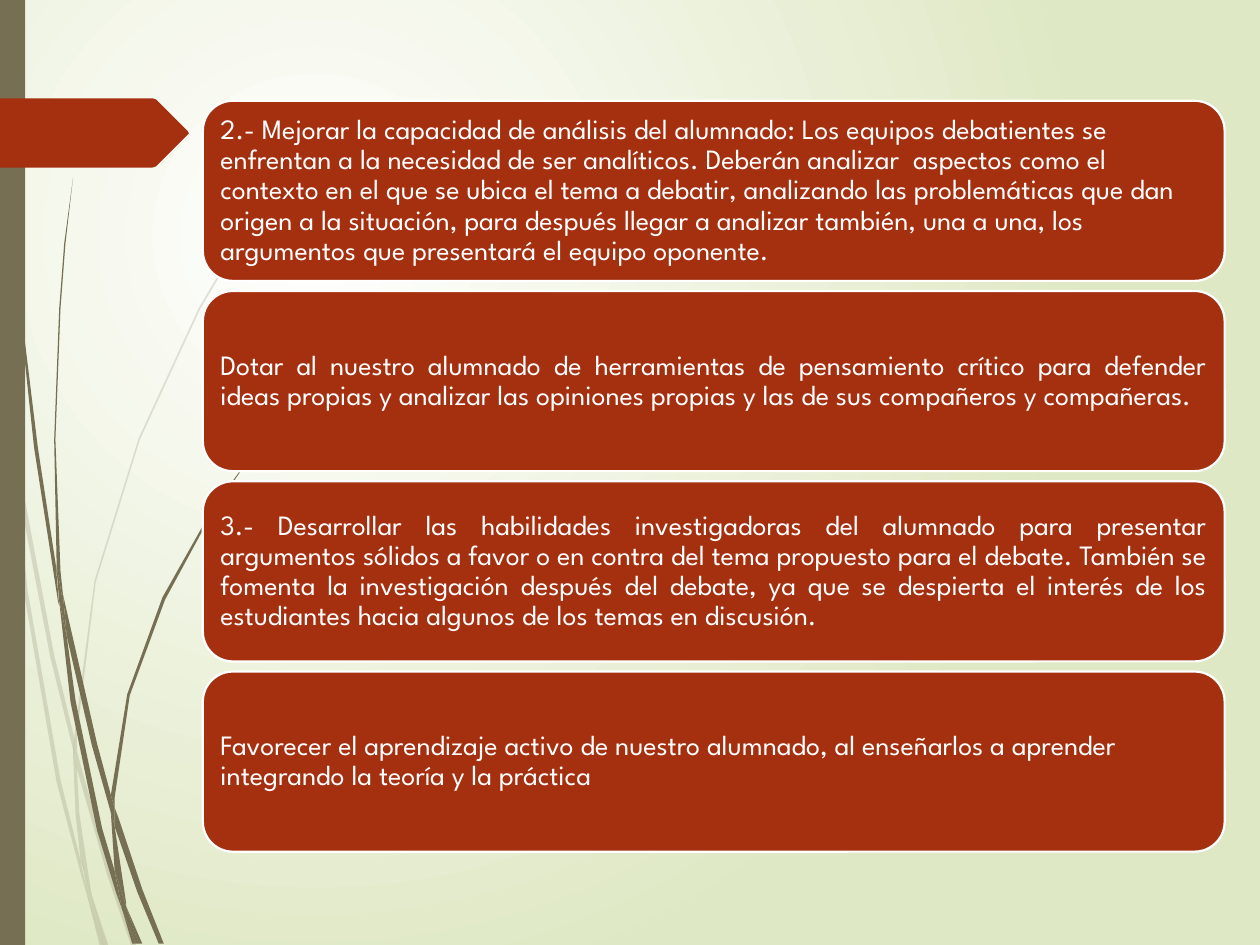
from lxml.etree import SubElement
from pptx import Presentation
from pptx.dml.color import RGBColor
from pptx.enum.shapes import MSO_SHAPE
from pptx.enum.text import MSO_ANCHOR, PP_ALIGN
from pptx.oxml.ns import qn
from pptx.util import Inches, Pt

OLIVE = RGBColor(0x76, 0x6F, 0x54)
RUST = RGBColor(0xA5, 0x30, 0x10)
WHITE = RGBColor(0xFF, 0xFF, 0xFF)
PALE_GREEN = RGBColor(0xDF, 0xE8, 0xC4)

FONT = "League Spartan"
CARD_LEFT, CARD_TOP, CARD_WIDTH, CARD_HEIGHT = 1.61, 0.8, 8.11, 1.43
CARD_PITCH = 1.51

CARDS = (
    ("2.- Mejorar la capacidad de análisis del alumnado: Los equipos debatientes se "
     "enfrentan a la necesidad de ser analíticos. Deberán analizar  aspectos como el "
     "contexto en el que se ubica el tema a debatir, analizando las problemáticas que dan "
     "origen a la situación, para después llegar a analizar también, una a una, los "
     "argumentos que presentará el equipo oponente.", PP_ALIGN.LEFT),
    ("Dotar al nuestro alumnado de herramientas de pensamiento crítico para defender "
     "ideas propias y analizar las opiniones propias y las de sus compañeros y "
     "compañeras. ", PP_ALIGN.JUSTIFY),
    ("3.- Desarrollar las habilidades investigadoras del alumnado para presentar "
     "argumentos sólidos a favor o en contra del tema propuesto para el debate. También se "
     "fomenta la investigación después del debate, ya que se despierta el interés de los "
     "estudiantes hacia algunos de los temas en discusión.", PP_ALIGN.JUSTIFY),
    ("Favorecer el aprendizaje activo de nuestro alumnado, al enseñarlos a aprender "
     "integrando la teoría y la práctica", PP_ALIGN.LEFT),
)

FAINT_BLADES = (
    ((0.08, 3.5), (0.06, 3.22), (0, 2.82), (0, 2.99), (0.07, 3.44)),
    ((0.4, 5.22), (0.59, 5.99), (0.59, 5.86), (0.43, 5.2), (0.1, 3.45), (0.12, 3.76)),
    ((0.64, 6.07), (0.61, 5.96), (0.61, 6.1), (0.85, 6.94), (1.04, 7.5), (1.08, 7.5),
     (0.88, 6.92)),
    ((0.83, 7.5), (0.86, 7.5), (0.73, 7.11)),
    ((0.64, 6.83), (0.48, 6.19), (0.22, 4.69), (0.12, 3.76), (0.08, 3.5), (0.19, 4.7),
     (0.45, 6.21), (0.64, 6.93), (0.7, 7.14), (0.69, 7.07)),
    ((0.58, 5.99), (0.6, 6.46), (0.64, 6.83), (0.67, 6.92), (0.73, 7.11), (0.72, 7.06),
     (0.63, 6.46), (0.61, 6.1), (0.61, 6.08)),
    ((0.61, 5.84), (0.76, 4.62), (1.11, 3.49), (1.59, 2.45), (1.87, 1.98), (2.01, 1.75),
     (2.17, 1.54), (2.17, 1.53), (2.01, 1.75), (1.86, 1.97), (1.58, 2.44), (1.1, 3.48),
     (0.75, 4.61), (0.59, 5.84), (0.59, 5.86), (0.61, 5.96)),
    ((0.7, 7.14), (0.79, 7.5), (0.82, 7.5)),
    ((0.61, 6.08), (0.61, 6.1), (0.61, 5.96), (0.59, 5.86), (0.58, 5.99)),
    ((0.67, 6.92), (0.65, 6.83), (0.69, 7.07), (0.7, 7.14), (0.82, 7.5), (0.83, 7.5),
     (0.73, 7.11)),
)

DARK_BLADES = (
    ((0.05, 1.1), (0.14, 2.33), (0.27, 3.55), (0.46, 4.77), (0.47, 4.81), (0.45, 4.57),
     (0.45, 4.53), (0.3, 3.55), (0.15, 2.32), (0.06, 1.09), (0.04, 0.48), (0.03, 0),
     (0.02, 0), (0.03, 0.48)),
    ((0.73, 5.92), (0.88, 6.45), (0.88, 6.33), (0.88, 6.31), (0.77, 5.9), (0.5, 4.72),
     (0.53, 5.05)),
    ((0.94, 6.49), (0.91, 6.41), (0.91, 6.56), (1.09, 7.08), (1.26, 7.49), (1.3, 7.49),
     (1.13, 7.06)),
    ((0.91, 6.91), (0.81, 6.57), (0.6, 5.56), (0.53, 5.05), (0.47, 4.77), (0.56, 5.57),
     (0.77, 6.59), (0.92, 7.08), (0.97, 7.22), (0.96, 7.17)),
    ((0.5, 4.72), (0.48, 4.53), (0.44, 3.49), (0.48, 2.45), (0.52, 1.93), (0.58, 1.41),
     (0.51, 1.93), (0.47, 2.45), (0.43, 3.49), (0.45, 4.49), (0.49, 4.72)),
    ((1.1, 7.49), (1.13, 7.49), (1, 7.19)),
    ((0.47, 4.77), (0.53, 5.05), (0.5, 4.72), (0.49, 4.72), (0.45, 4.49), (0.45, 4.53)),
    ((0.91, 6.33), (1.03, 5.52), (1.31, 4.76), (1.69, 4.06), (1.91, 3.74), (2.03, 3.59),
     (2.16, 3.44), (2.15, 3.44), (2.03, 3.58), (1.91, 3.73), (1.68, 4.05), (1.29, 4.74),
     (1.01, 5.51), (0.88, 6.31), (0.91, 6.41)),
    ((0.97, 7.22), (1.05, 7.49), (1.08, 7.49)),
    ((0.88, 6.45), (0.91, 6.91), (0.96, 7.06), (1, 7.19), (1, 7.16), (0.91, 6.56),
     (0.9, 6.51)),
    ((0.88, 6.45), (0.9, 6.51), (0.91, 6.56), (0.91, 6.41), (0.88, 6.31), (0.88, 6.33)),
    ((0.96, 7.06), (0.91, 6.91), (0.96, 7.17), (0.97, 7.22), (1.08, 7.49), (1.1, 7.49),
     (1, 7.19)),
)

ARROW_TAB = ((1.49, 1.07), (1.24, 1.32), (1.21, 1.33), (0, 1.33), (0, 0.78),
             (1.21, 0.78), (1.24, 0.79), (1.49, 1.04), (1.5, 1.06))


def paint_background(slide):
    """Fill the background with a radial gradient centred at the upper left."""
    fill = slide.background.fill
    fill.gradient()
    for stop, color in zip(fill.gradient_stops, (WHITE, PALE_GREEN)):
        stop.color.rgb = color
    gradient = slide.element.find(".//" + qn("a:gradFill"))
    gradient.remove(gradient.find(qn("a:lin")))
    radial = SubElement(gradient, qn("a:path"), path="circle")
    SubElement(radial, qn("a:fillToRect"), l="50000", t="50000", r="100000", b="100000")


def paint_shape(shape, color):
    """Give a shape a solid fill without outline or shadow."""
    shape.shadow.inherit = False
    shape.fill.solid()
    shape.fill.fore_color.rgb = color
    shape.line.fill.background()


def add_outline(slide, points, color, opacity=100):
    """Add a closed freeform through points given in inches."""
    corners = [(Inches(x), Inches(y)) for x, y in points]
    builder = slide.shapes.build_freeform(*corners[0])
    builder.add_line_segments(corners[1:], close=True)
    shape = builder.convert_to_shape()
    paint_shape(shape, color)
    if opacity < 100:
        fill_color = shape.element.find(".//" + qn("a:srgbClr"))
        SubElement(fill_color, qn("a:alpha"), val=str(opacity * 1000))


def add_side_bar(slide):
    """Add the olive bar along the left edge."""
    bar = slide.shapes.add_shape(MSO_SHAPE.RECTANGLE, 0, 0, Inches(0.2), Inches(7.5))
    paint_shape(bar, OLIVE)


def add_card(slide, top, text, alignment):
    """Add a rounded card with one paragraph of white text."""
    card = slide.shapes.add_shape(
        MSO_SHAPE.ROUNDED_RECTANGLE,
        Inches(CARD_LEFT), Inches(top), Inches(CARD_WIDTH), Inches(CARD_HEIGHT))
    paint_shape(card, RUST)
    card.line.color.rgb = WHITE
    card.line.width = Pt(1.25)
    frame = card.text_frame
    frame.word_wrap = True
    frame.vertical_anchor = MSO_ANCHOR.MIDDLE
    frame.margin_left = frame.margin_right = Inches(0.07)
    frame.margin_top = frame.margin_bottom = Inches(0.07)
    frame.text = text
    paragraph = frame.paragraphs[0]
    paragraph.alignment = alignment
    paragraph.line_spacing = 0.9
    font = paragraph.runs[0].font
    font.name = FONT
    font.size = Pt(16)
    font.color.rgb = WHITE


def main():
    """Build the slide and save it."""
    presentation = Presentation()
    presentation.slide_width = Inches(10)
    presentation.slide_height = Inches(7.5)
    slide = presentation.slides.add_slide(presentation.slide_layouts[6])
    paint_background(slide)
    for blade in FAINT_BLADES:
        add_outline(slide, blade, OLIVE, 20)
    for blade in DARK_BLADES:
        add_outline(slide, blade, OLIVE)
    add_side_bar(slide)
    add_outline(slide, ARROW_TAB, RUST)
    for index, (text, alignment) in enumerate(CARDS):
        add_card(slide, CARD_TOP + index * CARD_PITCH, text, alignment)
    presentation.save("out.pptx")


if __name__ == "__main__":
    main()
